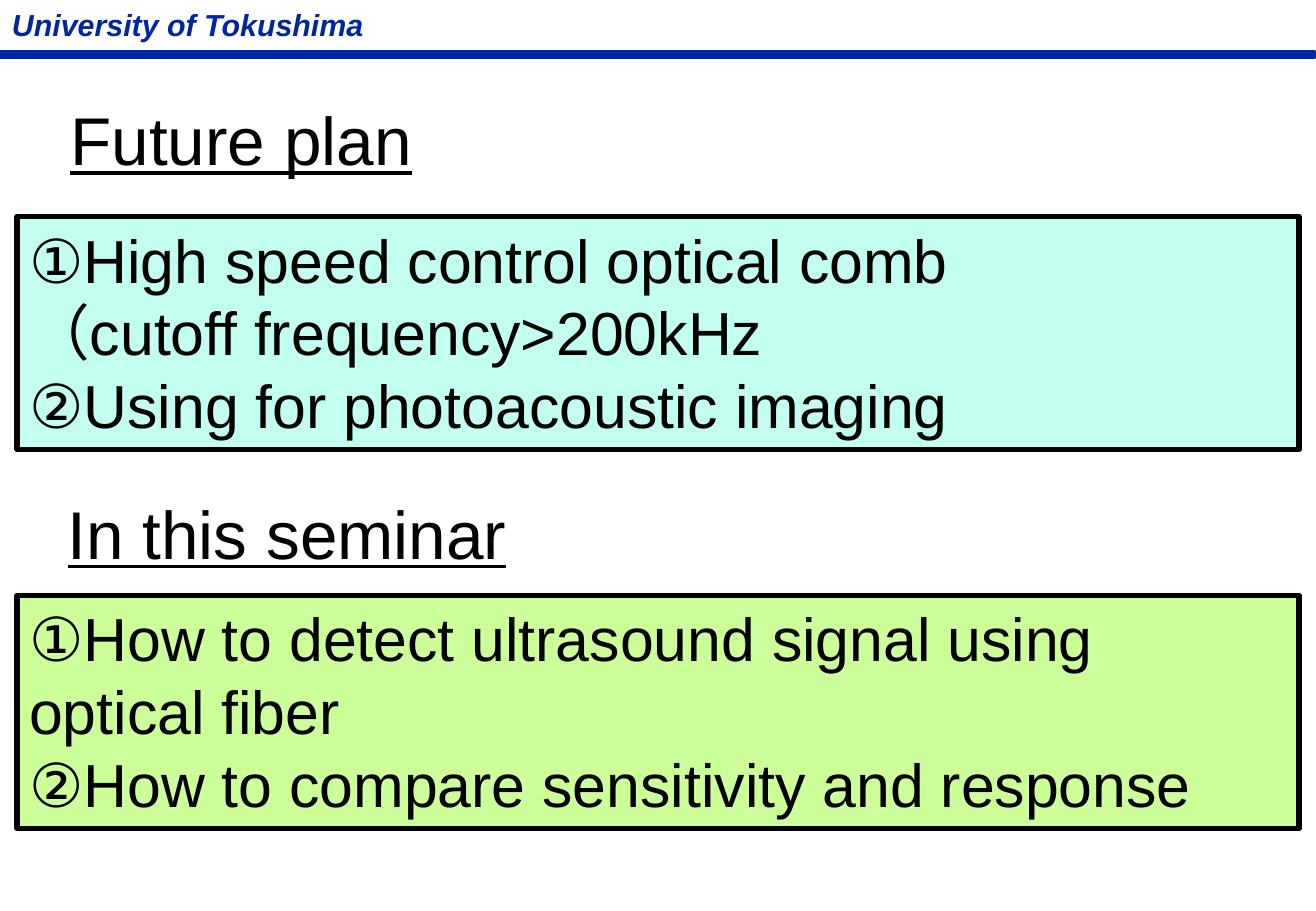
from pptx import Presentation
from pptx.dml.color import RGBColor
from pptx.enum.shapes import MSO_SHAPE
from pptx.enum.text import MSO_ANCHOR, MSO_AUTO_SIZE, PP_ALIGN
from pptx.oxml.ns import qn
from pptx.util import Inches, Pt
from lxml import etree

BLACK = "000000"
NAVY = "00279F"


def color(value):
    return RGBColor.from_string(value)


def place(shape, left, top, width, height):
    shape.left, shape.top = Inches(left), Inches(top)
    shape.width, shape.height = Inches(width), Inches(height)


def paint(shape, fill, line, line_width):
    shape.fill.solid()
    shape.fill.fore_color.rgb = color(fill)
    shape.line.color.rgb = color(line)
    shape.line.width = Pt(line_width)


def write(shape, lines, size, text_color=BLACK, bold=False, italic=False,
          underline=False, wrap=True):
    frame = shape.text_frame
    frame.text = "\n".join(lines)
    frame.word_wrap = wrap
    frame.auto_size = MSO_AUTO_SIZE.NONE
    frame.vertical_anchor = MSO_ANCHOR.TOP
    for paragraph in frame.paragraphs:
        paragraph.alignment = PP_ALIGN.LEFT
        paragraph.space_before = Pt(0)
        for run in paragraph.runs:
            font = run.font
            font.name, font.size = "Arial", Pt(size)
            font.bold, font.italic, font.underline = bold, italic, underline
            font.color.rgb = color(text_color)


def add_header(slide):
    bar = slide.shapes.add_shape(
        MSO_SHAPE.RECTANGLE, 0, Inches(0.42), Inches(10.82), Inches(0.06))
    bar.shadow.inherit = False
    paint(bar, NAVY, NAVY, 1)
    label = slide.shapes.add_textbox(0, 0, Inches(3.18), Inches(0.4))
    write(label, ["University of Tokushima"], 18, NAVY,
          bold=True, italic=True, wrap=False)


def format_heading(shape, text, left, top):
    place(shape, left, top, 8.16, 0.77)
    write(shape, [text], 40, underline=True)


def format_list(shape, lines, top, fill):
    place(shape, 0.14, top, 10.55, 1.92)
    paint(shape, fill, BLACK, 3)
    write(shape, lines, 36)
    for paragraph in shape.text_frame.paragraphs:
        properties = paragraph._p.get_or_add_pPr()
        properties.set("marL", "0")
        properties.set("indent", "0")
        etree.SubElement(properties, qn("a:buNone"))


def main():
    presentation = Presentation()
    presentation.slide_width = Inches(10.83)
    presentation.slide_height = Inches(7.5)
    slide = presentation.slides.add_slide(presentation.slide_layouts[3])
    title, plan_list, seminar_list = list(slide.placeholders)[:3]

    add_header(slide)
    format_heading(title, "Future plan", 0.48, 0.76)
    format_list(plan_list, [
        "①High speed control optical comb",
        "（cutoff frequency>200kHz",
        "②Using for photoacoustic imaging",
    ], 1.78, "C2FFF0")

    seminar_heading = slide.shapes.add_textbox(0, 0, 0, 0)
    format_heading(seminar_heading, "In this seminar", 0.46, 4)
    format_list(seminar_list, [
        "①How to detect ultrasound signal using\voptical fiber",
        "②How to compare sensitivity and response",
    ], 4.9, "CCFF99")

    presentation.save("out.pptx")


if __name__ == "__main__":
    main()
